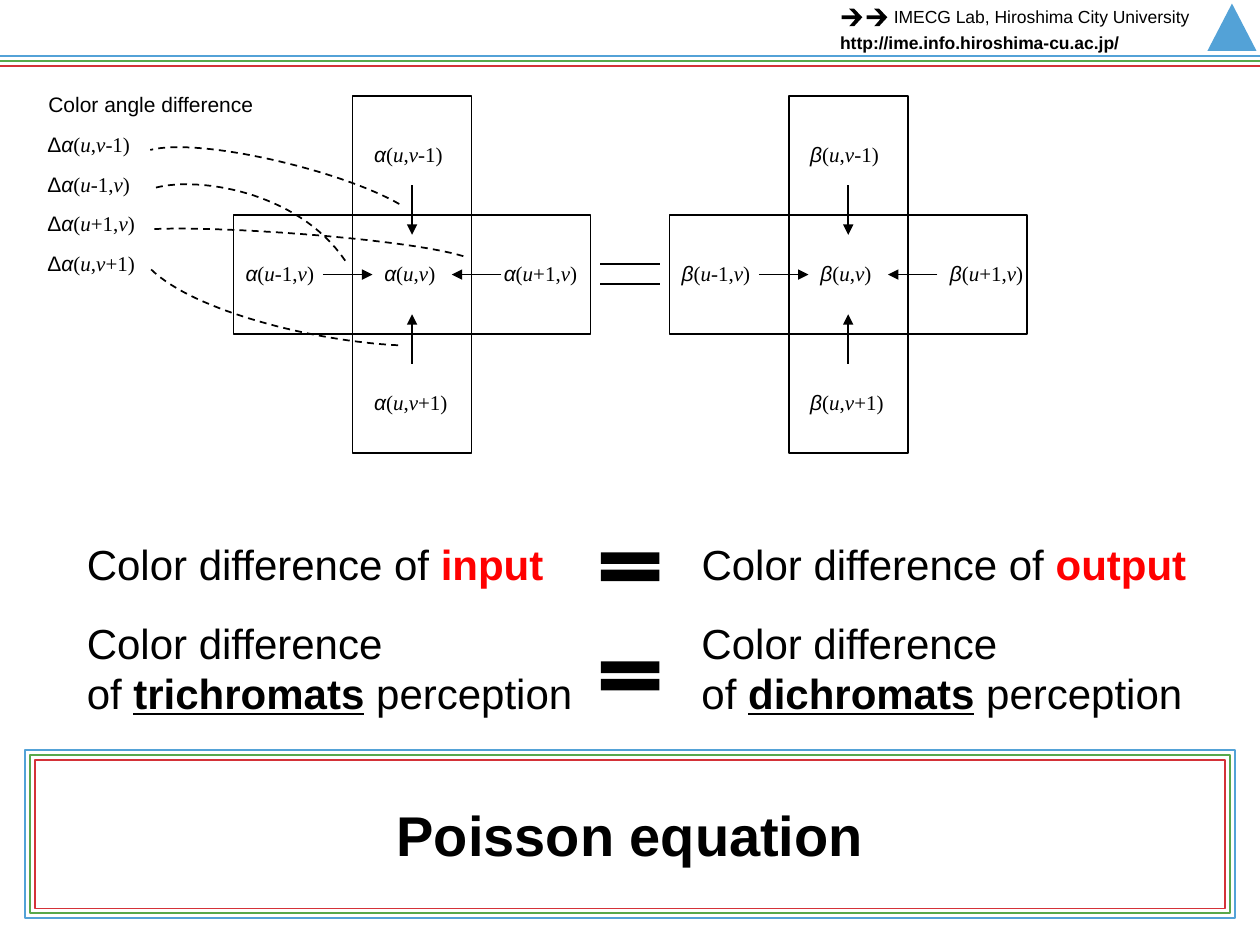
"""Build the slide that equates colour differences with a Poisson equation."""
from dataclasses import dataclass

import lxml.etree
import pptx
import pptx.dml.color
import pptx.enum.dml
import pptx.enum.shapes
import pptx.enum.text
import pptx.oxml.ns
import pptx.util

Pt = pptx.util.Pt
qn = pptx.oxml.ns.qn
SHAPE = pptx.enum.shapes.MSO_SHAPE
BLACK, WHITE, RED = "000000", "FFFFFF", "FF0000"
STRIPES = ("53A2D7", "58A84B", "D43238")
CELL = 68.04
CENTRE_Y = 156.9
Point = tuple[float, float]


@dataclass(frozen=True)
class Run:
    text: str
    size: float = 12
    font: str = "Arial"
    colour: str = BLACK
    bold: bool = False
    italic: bool = False
    underline: bool = False


@dataclass(frozen=True)
class Neighbour:
    dx: int
    dy: int
    u: str = ""
    v: str = ""


@dataclass(frozen=True)
class Cross:
    symbol: str
    centre_x: float
    right_label: float


@dataclass(frozen=True)
class Link:
    neighbour: Neighbour
    curve: tuple[Point, Point, Point, Point]


MIDDLE = Neighbour(0, 0)
TOP = Neighbour(0, -1, v="-1")
LEFT = Neighbour(-1, 0, u="-1")
RIGHT = Neighbour(1, 0, u="+1")
BOTTOM = Neighbour(0, 1, v="+1")
AROUND = (TOP, LEFT, RIGHT, BOTTOM)
CROSSES = (Cross("α", 235.5, 45.3), Cross("β", 484.7, 51))
LINKS = (
    Link(TOP, ((228.2, 116.6), (194.4, 97.2), (114.5, 78.5), (85.9, 85.7))),
    Link(LEFT, ((197.3, 149), (169.9, 108.7), (110.9, 100.1), (86.4, 108))),
    Link(RIGHT, ((264.8, 146.4), (230.4, 136.1), (121.7, 128.9), (87.4, 131))),
    Link(BOTTOM, ((227.5, 197.3), (180, 195.1), (110.9, 177.8), (86.4, 154))),
)


def rgb(colour: str):
    return pptx.dml.color.RGBColor.from_string(colour)


def add_text(slide, box: tuple, paragraphs: list[list[Run]], wrap: bool = False,
             centred: bool = False, grow: bool = True) -> None:
    frame = slide.shapes.add_textbox(*map(Pt, box)).text_frame
    frame.word_wrap = wrap
    auto = pptx.enum.text.MSO_AUTO_SIZE
    frame.auto_size = auto.SHAPE_TO_FIT_TEXT if grow else auto.NONE
    if not grow:
        frame.vertical_anchor = pptx.enum.text.MSO_ANCHOR.MIDDLE
    for index, runs in enumerate(paragraphs):
        paragraph = frame.add_paragraph() if index else frame.paragraphs[0]
        if centred:
            paragraph.alignment = pptx.enum.text.PP_ALIGN.CENTER
        for item in runs:
            run = paragraph.add_run()
            run.text = item.text
            font = run.font
            font.name, font.size = item.font, Pt(item.size)
            font.bold, font.italic = item.bold, item.italic
            font.underline = item.underline
            font.color.rgb = rgb(item.colour)


def paint(shape, fill: str | None = None, line: str | None = None) -> None:
    shape.shadow.inherit = False
    if fill:
        shape.fill.solid()
        shape.fill.fore_color.rgb = rgb(fill)
    else:
        shape.fill.background()
    if line:
        shape.line.color.rgb = rgb(line)
        shape.line.width = Pt(1)
    else:
        shape.line.fill.background()


def add_shape(slide, kind, box: tuple, fill: str | None = None,
              line: str | None = None) -> None:
    paint(slide.shapes.add_shape(kind, *map(Pt, box)), fill, line)


def add_line(slide, start: Point, end: Point, colour: str = BLACK,
             arrow: bool = False) -> None:
    connector = slide.shapes.add_connector(
        pptx.enum.shapes.MSO_CONNECTOR.STRAIGHT, *map(Pt, start + end))
    connector.line.color.rgb = rgb(colour)
    connector.line.width = Pt(1)
    if arrow:
        outline = connector.line._get_or_add_ln()
        lxml.etree.SubElement(outline, qn("a:tailEnd"), type="triangle")
    lxml.etree.SubElement(connector._element.spPr, qn("a:effectLst"))


def add_outline(slide, points: list[Point], closed: bool):
    corners = [(Pt(x), Pt(y)) for x, y in points]
    builder = slide.shapes.build_freeform(*corners[0])
    builder.add_line_segments(corners[1:], close=closed)
    return builder.convert_to_shape()


def add_curve(slide, curve: tuple, steps: int = 32) -> None:
    points = []
    for step in range(steps + 1):
        t = step / steps
        weights = ((1 - t) ** 3, 3 * t * (1 - t) ** 2, 3 * t * t * (1 - t), t ** 3)
        points.append(tuple(sum(w * p[axis] for w, p in zip(weights, curve))
                            for axis in (0, 1)))
    link = add_outline(slide, points, closed=False)
    paint(link, line=BLACK)
    link.line.dash_style = pptx.enum.dml.MSO_LINE.DASH


def add_term(slide, left: float, top: float, symbol: str, place: Neighbour,
             prefix: str = "") -> None:
    runs = [Run(prefix)] if prefix else []
    runs.append(Run(symbol, italic=True))
    for text in ("(", "u", place.u + ",", "v", place.v + ")"):
        runs.append(Run(text, font="Times New Roman", italic=text in "uv"))
    growth = {"": 0, "-1": 10, "+1": 13}[place.u + place.v]
    width = 44.5 + growth + 8 * len(prefix)
    add_text(slide, (left, top, width, 21.8), [runs])


def add_cross(slide, cross: Cross) -> None:
    x, y = cross.centre_x, CENTRE_Y
    for place in (MIDDLE,) + AROUND:
        add_shape(slide, SHAPE.RECTANGLE,
                  (x + (place.dx - 0.5) * CELL, y + (place.dy - 0.5) * CELL, CELL, CELL),
                  line=BLACK)
    label_offsets = {MIDDLE: (-23, -11.5), TOP: (-28.8, -79.5), LEFT: (-102.3, -11.5),
                     RIGHT: (cross.right_label, -11.5), BOTTOM: (-28.8, 62)}
    for place, (dx, dy) in label_offsets.items():
        add_term(slide, x + dx, y + dy, cross.symbol, place)
    for place in AROUND:
        start, end = ((x + place.dx * reach, y + place.dy * reach) for reach in (51, 22.7))
        add_line(slide, start, end, arrow=True)


def add_header(slide) -> None:
    for index, colour in enumerate(STRIPES):
        y = 31.9 + 2.85 * index
        add_line(slide, (0, y), (720, y), colour)
    arrow = ((4.3, 10), (7.9, 5.9), (0, 5.9), (0, 3.8), (7.9, 3.8),
             (4.3, 0), (7.1, 0), (11.8, 4.9), (7.1, 10))
    for left in (481, 495.3):
        paint(add_outline(slide, [(left + x, 5 + y) for x, y in arrow], closed=True), BLACK)
    add_text(slide, (473, 14.5, 199, 19.4),
             [[Run("http://ime.info.hiroshima-cu.ac.jp/", 10, bold=True)]], wrap=True)
    add_text(slide, (503.7, 0, 185, 19.4),
             [[Run("IMECG Lab, Hiroshima City University", 10)]], wrap=True)
    add_shape(slide, SHAPE.ISOSCELES_TRIANGLE, (690, 2, 28, 27), fill=STRIPES[0])


def add_statements(slide) -> None:
    for left, role, viewers, widths in ((42.5, "input", "trichromats", (278, 295)),
                                        (393.8, "output", "dichromats", (294.5, 292.3))):
        add_text(slide, (left, 304, widths[0], 36.3),
                 [[Run("Color difference of ", 24), Run(role, 24, colour=RED, bold=True)]])
        add_text(slide, (left, 349.2, widths[1], 65.4),
                 [[Run("Color difference", 24)],
                  [Run("of ", 24), Run(viewers, 24, bold=True, underline=True),
                   Run(" perception", 24)]])
    for top in (309.8, 372.2):
        add_shape(slide, SHAPE.MATH_EQUAL, (337.4, top, 45.4, 28.1), fill=BLACK)


def add_conclusion(slide) -> None:
    for index, colour in enumerate(reversed(STRIPES)):
        gap = 2.85 * index
        add_shape(slide, SHAPE.RECTANGLE,
                  (20 - gap, 434.1 - gap, 680.2 + 2 * gap, 85 + 2 * gap), line=colour)
    add_text(slide, (20, 434.1, 680.2, 84.5), [[Run("Poisson equation", 32, bold=True)]],
             wrap=True, centred=True, grow=False)


def main() -> None:
    deck = pptx.Presentation()
    deck.slide_width, deck.slide_height = Pt(720), Pt(540)
    slide = deck.slides.add_slide(deck.slide_layouts[6])
    slide.background.fill.solid()
    slide.background.fill.fore_color.rgb = rgb(WHITE)
    add_header(slide)
    for cross in CROSSES:
        add_cross(slide, cross)
    for y in (151, 162.2):
        add_line(slide, (342.9, y), (377, y))
    add_text(slide, (20, 49, 132.5, 21.8), [[Run("Color angle difference")]], centred=True)
    for row, link in enumerate(LINKS):
        add_term(slide, 20, 71.5 + 22.7 * row, "α", link.neighbour, prefix="Δ")
        add_curve(slide, link.curve)
    add_statements(slide)
    add_conclusion(slide)
    deck.save("out.pptx")


if __name__ == "__main__":
    main()
